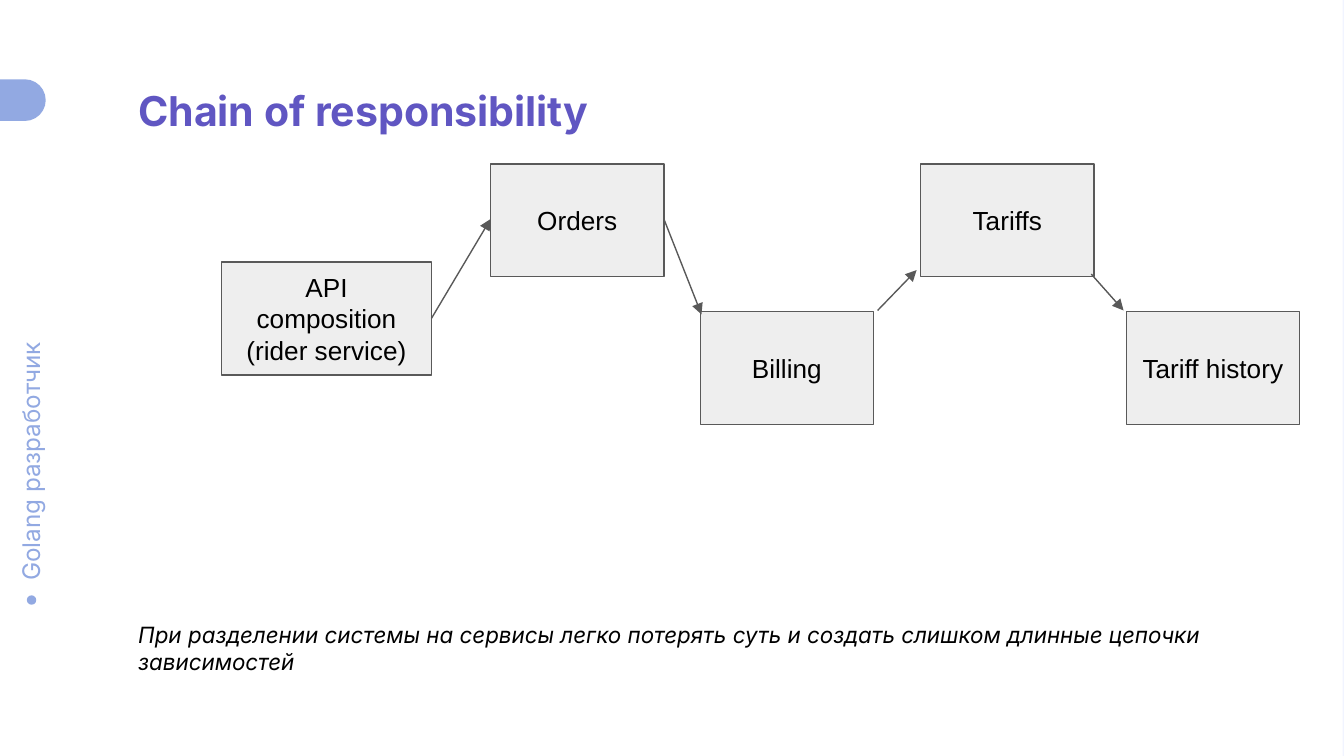
import pptx
import pptx.dml.color
import pptx.enum.shapes
import pptx.enum.text
import pptx.oxml
import pptx.oxml.ns
import pptx.util
from pptx.util import Inches

SHAPE = pptx.enum.shapes.MSO_SHAPE
ALIGN = pptx.enum.text.PP_ALIGN
ANCHOR = pptx.enum.text.MSO_ANCHOR
WIDTH = 10
HEIGHT = WIDTH * 9 / 16


def rgb(value):
    return pptx.dml.color.RGBColor.from_string(value)


def write(tf, text, size=14, font="Inter", color="000000", bold=False,
          italic=False, align=ALIGN.LEFT, anchor=ANCHOR.TOP, inset_y=0.1):
    tf.word_wrap = True
    tf.vertical_anchor = anchor
    tf.margin_left = tf.margin_right = Inches(0.1)
    tf.margin_top = tf.margin_bottom = Inches(inset_y)
    p = tf.paragraphs[0]
    p.alignment = align
    r = p.add_run()
    r.text = text
    r.font.size = pptx.util.Pt(size)
    r.font.name = font
    r.font.bold = bold
    r.font.italic = italic
    r.font.color.rgb = rgb(color)


class Deck:
    """Holds the style and the current slide."""
    ACCENT = "92A9E2"
    TITLE = "6056C2"
    BOX = "EEEEEE"
    LINE = "595959"
    LINE_WIDTH = pptx.util.Pt(0.75)

    def __init__(self, slide, background):
        self.s = slide
        fill = slide.background.fill
        fill.solid()
        fill.fore_color.rgb = rgb(background)

    def shape(self, kind, x, y, w, h, fill, line=None):
        sp = self.s.shapes.add_shape(kind, Inches(x), Inches(y), Inches(w), Inches(h))
        sp.shadow.inherit = False
        sp.fill.solid()
        sp.fill.fore_color.rgb = rgb(fill)
        if line:
            sp.line.color.rgb = rgb(line)
            sp.line.width = self.LINE_WIDTH
        else:
            sp.line.fill.background()
        return sp

    def text(self, x, y, w, h, text, rotation=0, **fmt):
        sp = self.s.shapes.add_textbox(Inches(x), Inches(y), Inches(w), Inches(h))
        sp.rotation = rotation
        write(sp.text_frame, text, **fmt)

    def service(self, text, x, y, w=1.29, h=0.84):
        sp = self.shape(SHAPE.RECTANGLE, x, y, w, h, self.BOX, self.LINE)
        write(sp.text_frame, text, font="Arial", align=ALIGN.CENTER, anchor=ANCHOR.MIDDLE)

    def arrow(self, x1, y1, x2, y2):
        c = self.s.shapes.add_connector(
            pptx.enum.shapes.MSO_CONNECTOR.STRAIGHT,
            Inches(x1), Inches(y1), Inches(x2), Inches(y2))
        c.line.color.rgb = rgb(self.LINE)
        c.line.width = self.LINE_WIDTH
        ns = pptx.oxml.ns.nsdecls("a")
        ln = c._element.spPr.find(pptx.oxml.ns.qn("a:ln"))
        ln.append(pptx.oxml.parse_xml(f'<a:tailEnd {ns} type="triangle"/>'))
        c._element.spPr.append(pptx.oxml.parse_xml(f"<a:effectLst {ns}/>"))


def main():
    prs = pptx.Presentation()
    prs.slide_width, prs.slide_height = Inches(WIDTH), Inches(HEIGHT)
    deck = Deck(prs.slides.add_slide(prs.slide_layouts[6]), "F1F4FF")

    deck.shape(SHAPE.RECTANGLE, -0.01, 0, WIDTH, HEIGHT, "FFFFFF")
    deck.text(-0.77, 3.21, 2, 0.42, "Golang разработчик", rotation=270,
              size=13, color=deck.ACCENT)
    deck.shape(SHAPE.OVAL, 0.2, 4.43, 0.07, 0.07, deck.ACCENT)
    pill = deck.shape(SHAPE.ROUNDED_RECTANGLE, -0.38, 0.59, 0.72, 0.31, deck.ACCENT)
    pill.adjustments[0] = 0.5

    deck.text(0.93, 0.59, 6.12, 0.47, "Chain of responsibility",
              size=22, color=deck.TITLE, bold=True, inset_y=0.05)
    deck.text(0.93, 4.52, 8.44, 0.61,
              "При разделении системы на сервисы легко потерять суть "
              "и создать слишком длинные цепочки зависимостей",
              size=12, italic=True)

    upper, lower = 1.22, 2.32
    deck.service("API composition (rider service)", 1.65, 1.95, w=1.56)
    deck.service("Orders", 3.65, upper)
    deck.service("Billing", 5.21, lower)
    deck.service("Tariffs", 6.85, upper)
    deck.service("Tariff history", 8.38, lower)

    for ends in ((3.21, 2.37, 3.65, 1.63), (4.94, 1.63, 5.22, 2.34),
                 (6.53, 2.31, 6.82, 2.01), (8.12, 2.04, 8.36, 2.31)):
        deck.arrow(*ends)

    prs.save("out.pptx")


if __name__ == "__main__":
    main()
